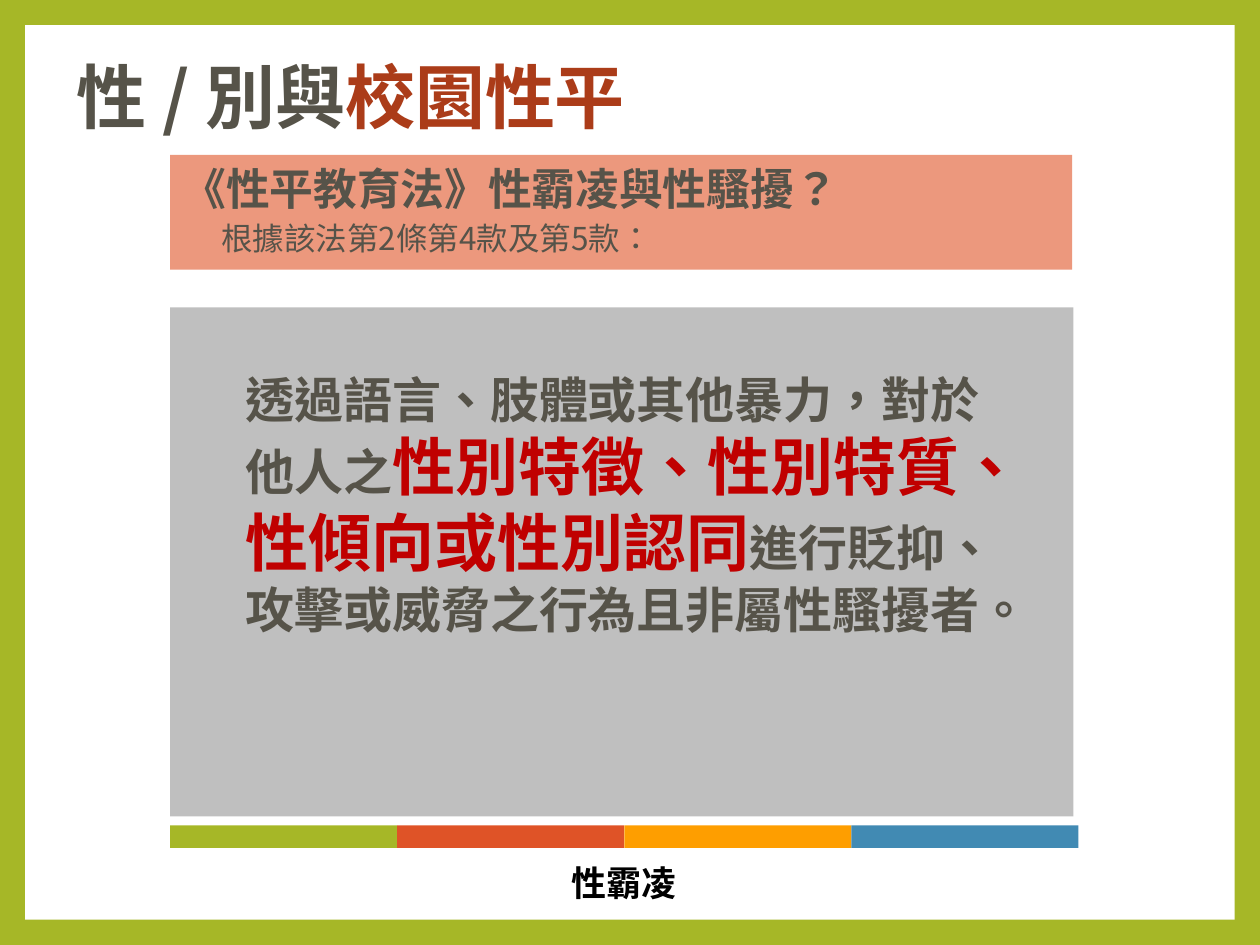
from dataclasses import dataclass

from pptx import Presentation
from pptx.dml.color import RGBColor
from pptx.enum.shapes import MSO_SHAPE
from pptx.enum.text import MSO_ANCHOR, PP_ALIGN
from pptx.oxml.ns import qn
from pptx.util import Inches, Pt

RECT = MSO_SHAPE.RECTANGLE
TOP, MIDDLE = MSO_ANCHOR.TOP, MSO_ANCHOR.MIDDLE
LEFT, CENTER = PP_ALIGN.LEFT, PP_ALIGN.CENTER


@dataclass(frozen=True)
class Theme:
    font: str = "Noto Sans CJK SC"
    green: str = "A6B727"
    orange: str = "DF5327"
    amber: str = "FE9E00"
    blue: str = "418AB3"
    white: str = "FFFFFF"
    salmon: str = "EC987D"
    grey: str = "BFBFBF"
    text: str = "565349"
    rust: str = "AB3C19"
    red: str = "C00000"
    black: str = "000000"
    title: int = 40
    key: int = 36
    body: int = 28
    heading: int = 25
    caption: int = 20
    note: int = 18


THEME = Theme()


def add_rect(slide, box, color):
    sp = slide.shapes.add_shape(RECT, *map(Inches, box))
    sp.shadow.inherit = False
    sp.fill.solid()
    sp.fill.fore_color.rgb = RGBColor.from_string(color)
    sp.line.fill.background()
    return sp


def add_text(slide, box, anchor=TOP):
    tf = slide.shapes.add_textbox(*map(Inches, box)).text_frame
    tf.word_wrap = True
    tf.vertical_anchor = anchor
    return tf


def add_run(p, text, size, color, bold=True):
    r = p.add_run()
    r.text = text
    font = r.font
    font.name, font.size, font.bold = THEME.font, Pt(size), bold
    font.color.rgb = RGBColor.from_string(color)
    # East Asian typeface follows the Latin one
    r_pr = r._r.get_or_add_rPr()
    r_pr.set("lang", "zh-TW")
    ea = r_pr.makeelement(qn("a:ea"), {"typeface": THEME.font})
    r_pr.find(qn("a:latin")).addnext(ea)


def add_frame(slide, box):
    fill = slide.background.fill
    fill.solid()
    fill.fore_color.rgb = RGBColor.from_string(THEME.green)
    add_rect(slide, box, THEME.white)


def add_title(slide, box):
    p = add_text(slide, box, MIDDLE).paragraphs[0]
    p.line_spacing = 0.9
    add_run(p, "性 / 別與", THEME.title, THEME.text)
    add_run(p, "校園性平", THEME.title, THEME.rust)


def add_heading(slide, box):
    tf = add_rect(slide, box, THEME.salmon).text_frame
    tf.word_wrap = True
    tf.vertical_anchor = MIDDLE
    heading, note = tf.paragraphs[0], tf.add_paragraph()
    for p in (heading, note):
        p.alignment = LEFT
        p.line_spacing = 0.9
    add_run(heading, "《性平教育法》性霸凌與性騷擾？", THEME.heading, THEME.text)
    note.space_before = Pt(5)
    note._p.get_or_add_pPr().set("marL", str(Inches(0.31)))
    add_run(note, "根據該法第2條第4款及第5款：", THEME.note, THEME.text, bold=False)


def add_color_bar(slide, box):
    left, top, width, height = box
    colors = (THEME.green, THEME.orange, THEME.amber, THEME.blue)
    step = width / len(colors)
    for i, color in enumerate(colors):
        add_rect(slide, (left + i * step, top, step, height), color)


def add_caption(slide, box):
    p = add_text(slide, box).paragraphs[0]
    p.alignment = CENTER
    add_run(p, "性霸凌", THEME.caption, THEME.black)


def add_definition(slide, panel, box):
    add_rect(slide, panel, THEME.grey)
    p = add_text(slide, box).paragraphs[0]
    add_run(p, "透過語言、肢體或其他暴力，對於他人之", THEME.body, THEME.text)
    add_run(p, "性別特徵、性別特質、性傾向或性別認同", THEME.key, THEME.red)
    add_run(p, "進行貶抑、攻擊或威脅之行為且非屬性騷擾者。", THEME.body, THEME.text)


def main():
    prs = Presentation()
    prs.slide_width, prs.slide_height = Inches(10), Inches(7.5)
    slide = prs.slides.add_slide(prs.slide_layouts[6])

    # Border and heading
    add_frame(slide, (0.2, 0.2, 9.6, 7.1))
    add_title(slide, (0.51, 0.21, 8.1, 1.18))
    add_heading(slide, (1.35, 1.23, 7.16, 0.91))

    # Definition panel with its colour bar and caption
    add_caption(slide, (1.37, 6.79, 7.17, 0.95))
    add_definition(slide, (1.35, 2.44, 7.17, 4.04), (1.85, 2.88, 6.38, 2.26))
    add_color_bar(slide, (1.35, 6.55, 7.21, 0.18))

    prs.save("out.pptx")


if __name__ == "__main__":
    main()
